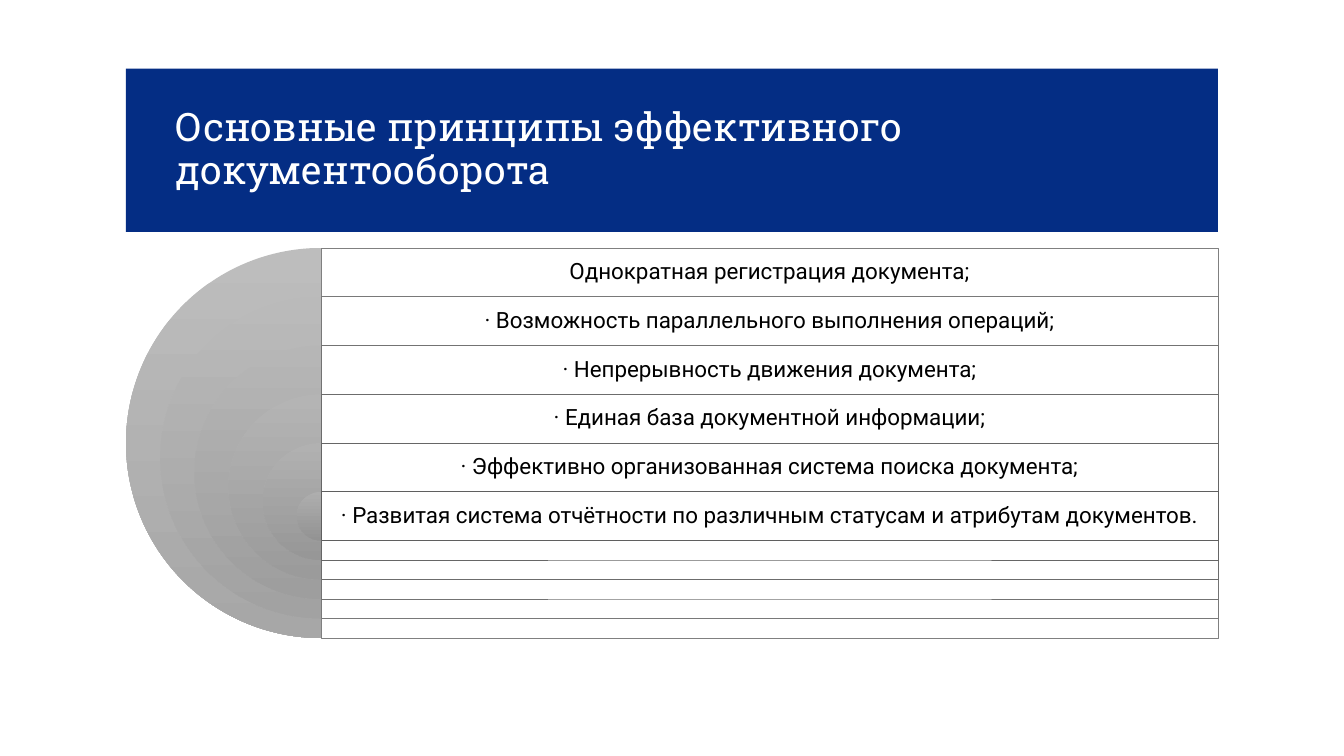
from lxml.etree import SubElement
from pptx import Presentation
from pptx.dml.color import RGBColor
from pptx.enum.shapes import MSO_SHAPE
from pptx.enum.text import MSO_ANCHOR, PP_ALIGN
from pptx.oxml.ns import qn
from pptx.util import Inches, Pt

NAVY = RGBColor(0x04, 0x2D, 0x84)
WHITE = RGBColor(0xFF, 0xFF, 0xFF)
BLACK = RGBColor(0x00, 0x00, 0x00)

LEFT, WIDTH = 1.25, 10.83
LIST_TOP, LIST_HEIGHT = 2.46, 3.87
ROW = LIST_HEIGHT / 8
RING_STEP = 1.4 * ROW
AXIS = LEFT + LIST_HEIGHT / 2
LIST_WIDTH = LEFT + WIDTH - AXIS

TITLE = "Основные принципы эффективного документооборота"
PRINCIPLES = [
    ("Однократная регистрация документа;", "BDBDBD", "A7A7A7", "808080"),
    ("· Возможность параллельного выполнения операций;", "BABABA", "A2A2A2", "797979"),
    ("· Непрерывность движения документа;", "B6B6B6", "9E9E9E", "737373"),
    ("· Единая база документной информации;", "B4B4B4", "9B9B9B", "6C6C6C"),
    ("· Эффективно организованная система поиска документа;", "B1B1B1", "979797", "666666"),
    ("· Развитая система отчётности по различным статусам и атрибутам документов.",
     "AEAEAE", "939393", "5F5F5F"),
]


def add_preset(page, preset, left, top, width, height):
    """Add a preset shape without shadow or outline."""
    shape = page.shapes.add_shape(
        preset, Inches(left), Inches(top), Inches(width), Inches(height))
    shape.shadow.inherit = False
    shape.line.fill.background()
    return shape


def write_text(shape, text, font_name, size, color, alignment, side, edge):
    """Write one vertically centred paragraph into a shape."""
    frame = shape.text_frame
    frame.word_wrap = True
    frame.vertical_anchor = MSO_ANCHOR.MIDDLE
    frame.margin_left = frame.margin_right = Inches(side)
    frame.margin_top = frame.margin_bottom = Inches(edge)
    paragraph = frame.paragraphs[0]
    paragraph.text = text
    paragraph.alignment = alignment
    paragraph.line_spacing = 0.9
    paragraph.font.name = font_name
    paragraph.font.size = Pt(size)
    paragraph.font.color.rgb = color


def add_title(page):
    """Add the navy title banner."""
    banner = add_preset(page, MSO_SHAPE.RECTANGLE, LEFT, 0.68, WIDTH, 1.62)
    banner.fill.solid()
    banner.fill.fore_color.rgb = NAVY
    write_text(banner, TITLE, "Roboto Slab", 28, WHITE, PP_ALIGN.LEFT, 0.49, 0.05)


def add_half_disc(page, top, diameter, colors):
    """Add a left half disc shaded from top to bottom."""
    disc = add_preset(page, MSO_SHAPE.PIE, AXIS - diameter / 2, top, diameter, diameter)
    disc.adjustments[0] = 54
    disc.adjustments[1] = 162
    disc.fill.gradient()
    disc.fill.gradient_angle = 270
    for stop, color in zip(disc.fill.gradient_stops, colors):
        stop.color.rgb = RGBColor.from_string(color)


def add_panel(page, top, height, line_color):
    """Add a slightly transparent white panel with a thin outline."""
    panel = add_preset(page, MSO_SHAPE.RECTANGLE, AXIS, top, LIST_WIDTH, height)
    panel.fill.solid()
    panel.fill.fore_color.rgb = WHITE
    fill_color = panel.fill._xPr.find(qn("a:solidFill"))[0]
    SubElement(fill_color, qn("a:alpha"), val="90000")
    panel.line.color.rgb = RGBColor.from_string(line_color)
    panel.line.width = Pt(0.5)


def add_principle(page, index, text, light, dark, line_color):
    """Add one ring of the target list with its row of text."""
    top = LIST_TOP + index * ROW
    diameter = LIST_HEIGHT - index * RING_STEP
    add_half_disc(page, top, diameter, (light, dark))
    add_panel(page, top, diameter, line_color)
    box = page.shapes.add_textbox(
        Inches(AXIS), Inches(top), Inches(LIST_WIDTH), Inches(ROW))
    write_text(box, text, "Roboto", 16, BLACK, PP_ALIGN.CENTER, 0.07, 0.07)


def main():
    """Build the slide and save it."""
    deck = Presentation()
    deck.slide_width = Inches(13.33)
    deck.slide_height = Inches(7.5)
    page = deck.slides.add_slide(deck.slide_layouts[6])
    add_title(page)
    for index, principle in enumerate(PRINCIPLES):
        add_principle(page, index, *principle)
    deck.save("out.pptx")


if __name__ == "__main__":
    main()
